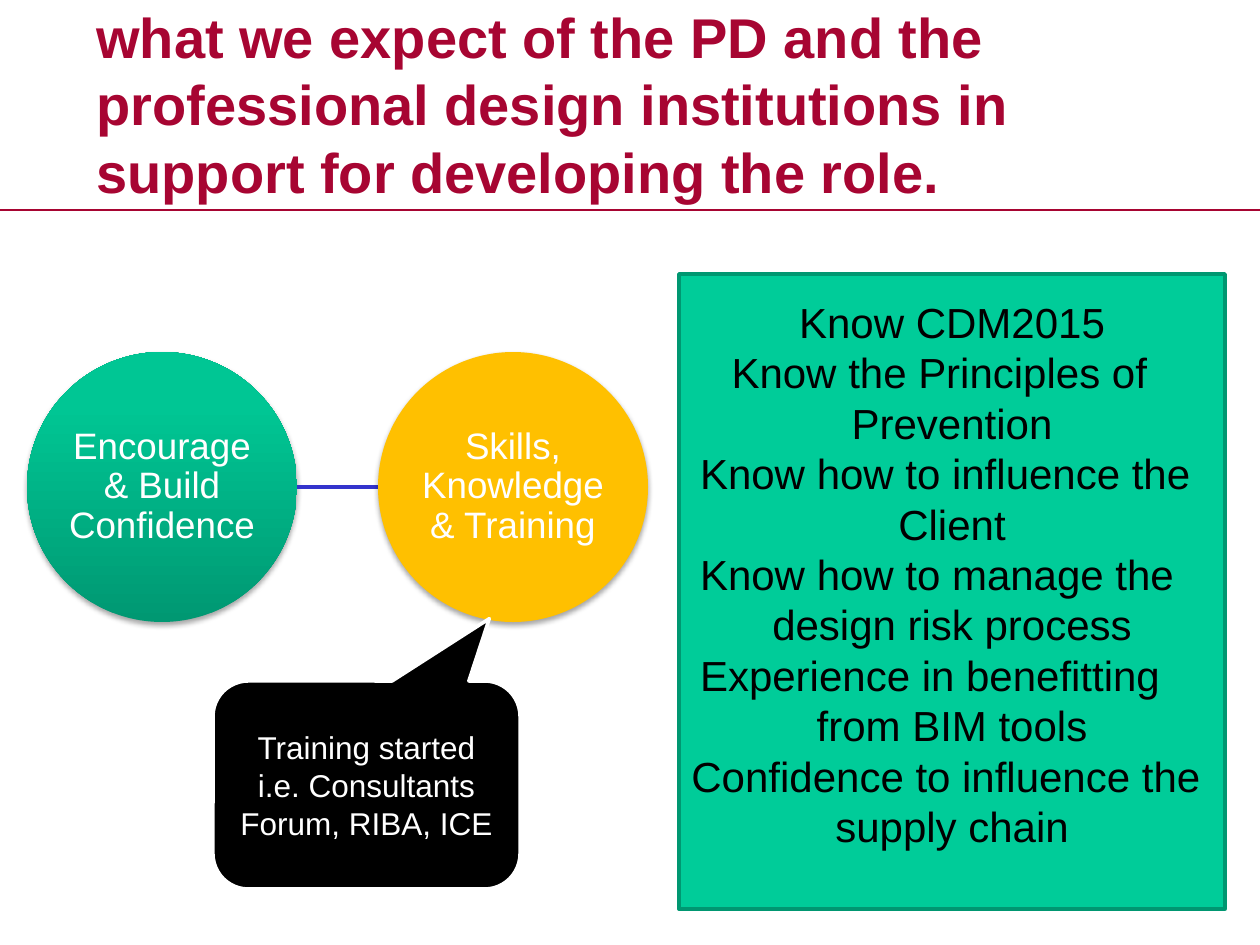
from lxml import etree
from pptx import Presentation
from pptx.dml.color import RGBColor
from pptx.enum.shapes import MSO_CONNECTOR, MSO_SHAPE
from pptx.enum.text import MSO_ANCHOR, PP_ALIGN
from pptx.oxml.ns import qn
from pptx.util import Emu, Pt

SCALE = 914400 / 126
OVAL = MSO_SHAPE.OVAL
RECT = MSO_SHAPE.RECTANGLE
CALLOUT = MSO_SHAPE.ROUNDED_RECTANGULAR_CALLOUT
STRAIGHT = MSO_CONNECTOR.STRAIGHT
MIDDLE = MSO_ANCHOR.MIDDLE
LEFT, CENTER = PP_ALIGN.LEFT, PP_ALIGN.CENTER

CRIMSON, GREEN, DARK_GREEN = "A70532", "00CC99", "009771"
BLACK, WHITE, AMBER, BLUE = "000000", "FFFFFF", "FFC000", "3333CC"
CIRCLE = 270
CIRCLE_TOP = 352
CIRCLE_MID = CIRCLE_TOP + CIRCLE // 2
SKILLS = [
    "Know CDM2015",
    "Know the Principles of \tPrevention",
    "Know how to influence the \tClient",
    "Know how to manage the \tdesign risk process",
    "Experience in benefitting \tfrom BIM tools",
    "Confidence to influence the \tsupply chain",
]


def px(n):
    """Turn pixels into EMU."""
    return Emu(round(n * SCALE))


def rgb(value):
    """Turn a hex string into a colour."""
    return RGBColor.from_string(value)


def write(sp, lines, size, color, align=CENTER, bold=False, spacing=None):
    """Fill a shape with one paragraph per line."""
    tf = sp.text_frame
    tf.word_wrap = True
    tf.vertical_anchor = MIDDLE
    for i, line in enumerate(lines):
        p = tf.paragraphs[0] if i == 0 else tf.add_paragraph()
        p.alignment = align
        p.line_spacing = spacing
        r = p.add_run()
        r.text = line
        r.font.name = "Arial"
        r.font.size = Pt(size)
        r.font.bold = bold
        r.font.color.rgb = rgb(color)
    return tf


def add_box(s, kind, x, y, w, h, fill, line=None):
    """Add a filled preset shape without shadow."""
    sp = s.shapes.add_shape(kind, px(x), px(y), px(w), px(h))
    sp.shadow.inherit = False
    sp.fill.solid()
    sp.fill.fore_color.rgb = rgb(fill)
    if line:
        sp.line.color.rgb = rgb(line)
        sp.line.width = Pt(2)
    else:
        sp.line.fill.background()
    return sp


def add_shadow(sp):
    """Give a shape a soft shadow below it."""
    effects = sp._element.spPr.find(qn("a:effectLst"))
    shadow = etree.SubElement(
        effects, qn("a:outerShdw"), blurRad=str(Pt(3.1)), dist=str(Pt(1.8)),
        dir="5400000", rotWithShape="0")
    color = etree.SubElement(shadow, qn("a:srgbClr"), val=BLACK)
    etree.SubElement(color, qn("a:alpha"), val="35000")


def shade(sp, stops):
    """Apply a two-stop gradient rising from the bottom."""
    sp.fill.gradient()
    sp.fill.gradient_angle = 90
    for stop, (position, color) in zip(sp.fill.gradient_stops, stops):
        stop.position = position
        stop.color.rgb = rgb(color)


def add_circle(s, x, text, fill):
    """Add a shadowed circle with its label."""
    sp = add_box(s, OVAL, x, CIRCLE_TOP, CIRCLE, CIRCLE, fill)
    add_shadow(sp)
    tf = write(sp, [text], 21, WHITE, spacing=0.9)
    tf.margin_left = tf.margin_right = tf.margin_top = tf.margin_bottom = px(1)
    return sp


def add_line(s, x1, x2, y, color, width):
    """Add a horizontal line without shadow."""
    line = s.shapes.add_connector(STRAIGHT, px(x1), px(y), px(x2), px(y))
    line.line.color.rgb = rgb(color)
    line.line.width = Pt(width)
    etree.SubElement(line._element.spPr, qn("a:effectLst"))


def add_title(s, text):
    """Add the heading above the rule."""
    sp = s.shapes.add_textbox(px(84), px(45), px(941), px(117))
    write(sp, [text], 32, CRIMSON, LEFT, bold=True)


def add_callout(s, text):
    """Add the speech bubble pointing at the second circle."""
    sp = add_box(s, CALLOUT, 213, 681, 307, 208, BLACK, WHITE)
    sp.adjustments[0] = 0.4
    sp.adjustments[1] = -0.8
    sp.adjustments[2] = 0.17
    write(sp, [text], 18, WHITE)


def add_panel(s, lines):
    """Add the green panel of skills, raised slightly by its lower margin."""
    sp = add_box(s, RECT, 679, 274, 546, 635, GREEN, DARK_GREEN)
    tf = write(sp, lines, 24, BLACK)
    tf.margin_bottom = px(42)


def main():
    """Build the slide and save it."""
    prs = Presentation()
    prs.slide_width, prs.slide_height = px(1260), px(945)
    s = prs.slides.add_slide(prs.slide_layouts[6])
    add_line(s, 0, 1260, 210, CRIMSON, 1.25)
    add_title(s, "what we expect of the PD and the professional design "
                 "institutions in support for developing the role.")
    confidence = add_circle(s, 27, "Encourage & Build Confidence", GREEN)
    shade(confidence, [(0, "009872"), (0.8, "00C694")])
    add_line(s, 297, 378, CIRCLE_MID, BLUE, 2)
    add_circle(s, 378, "Skills, Knowledge & Training", AMBER)
    add_callout(s, "Training started i.e. Consultants Forum, RIBA, ICE")
    add_panel(s, SKILLS)
    prs.save("out.pptx")


if __name__ == "__main__":
    main()
